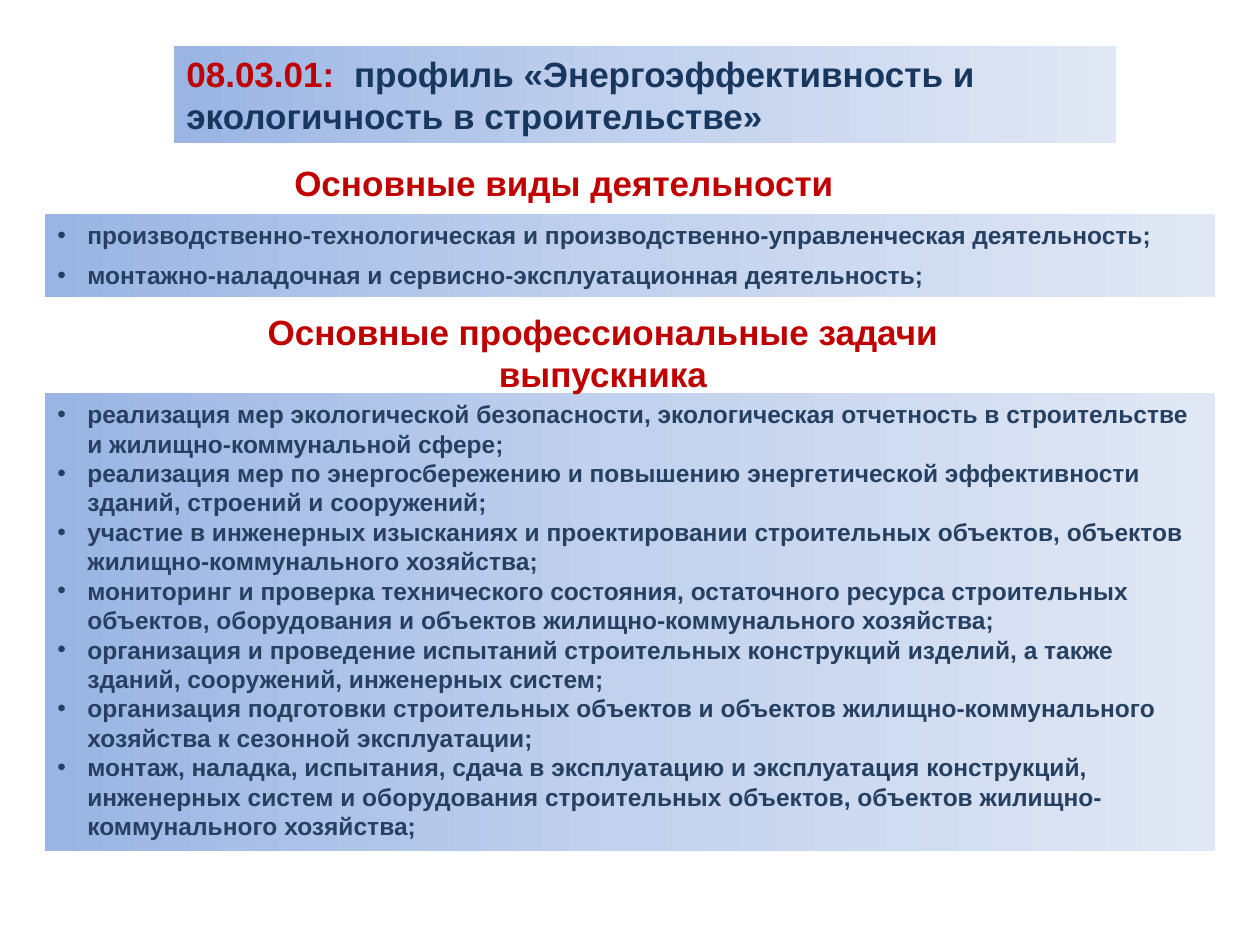
from copy import deepcopy

from lxml import etree
from pptx import Presentation
from pptx.dml.color import RGBColor
from pptx.enum.shapes import MSO_SHAPE
from pptx.enum.text import MSO_ANCHOR, MSO_AUTO_SIZE, PP_ALIGN
from pptx.oxml.ns import qn
from pptx.util import Emu, Pt

RECTANGLE = MSO_SHAPE.RECTANGLE
TOP = MSO_ANCHOR.TOP
FIT_SHAPE = MSO_AUTO_SIZE.SHAPE_TO_FIT_TEXT
LEFT, CENTER = PP_ALIGN.LEFT, PP_ALIGN.CENTER

EMU_PER_PX = 914400 / 126
SLIDE_SIZE = (1260, 945)
BULLET_INDENT = 30
PANEL_LEFT, PANEL_WIDTH = 45, 1170

COLORS = {
    "heading": "C00000",
    "title": "17375E",
    "list": "254061",
}
GRADIENT = {0: "9AB5E4", 0.5: "C2D1ED", 1: "E1E8F5"}
FRAME_FORMAT = {"word_wrap": True, "auto_size": FIT_SHAPE, "vertical_anchor": TOP}

ACTIVITIES = [
    "производственно-технологическая и производственно-управленческая деятельность;",
    "монтажно-наладочная и сервисно-эксплуатационная деятельность;",
]
TASKS = [
    "реализация мер экологической безопасности, экологическая отчетность в строительстве "
    "и жилищно-коммунальной сфере;",
    "реализация мер по энергосбережению и повышению энергетической эффективности "
    "зданий, строений и сооружений;",
    "участие в инженерных изысканиях и проектировании строительных объектов, объектов "
    "жилищно-коммунального хозяйства;",
    "мониторинг и проверка технического состояния, остаточного ресурса строительных "
    "объектов, оборудования и объектов жилищно-коммунального хозяйства;",
    "организация и проведение испытаний строительных конструкций изделий, а также "
    "зданий, сооружений, инженерных систем;",
    "организация подготовки строительных объектов и объектов жилищно-коммунального "
    "хозяйства к сезонной эксплуатации;",
    "монтаж, наладка, испытания, сдача в эксплуатацию и эксплуатация конструкций, "
    "инженерных систем и оборудования строительных объектов, объектов "
    "жилищно-коммунального хозяйства;",
]


def px(value):
    return Emu(round(value * EMU_PER_PX))


def apply_format(target, values):
    for name, value in values.items():
        setattr(target, name, value)


def fill_gradient(shape):
    """Fill with the three-stop gradient running from left to right."""
    shape.fill.gradient()
    shape.fill.gradient_angle = 0
    stop_list = shape.element.spPr.find(qn("a:gradFill")).find(qn("a:gsLst"))
    stop_list.append(deepcopy(stop_list[0]))
    for stop, (position, color) in zip(shape.fill.gradient_stops, GRADIENT.items()):
        stop.position = position
        stop.color.rgb = RGBColor.from_string(color)


def add_bullet(paragraph):
    properties = paragraph._p.get_or_add_pPr()
    properties.set("marL", str(px(BULLET_INDENT)))
    properties.set("indent", str(-px(BULLET_INDENT)))
    etree.SubElement(properties, qn("a:buFont")).set("typeface", "Arial")
    etree.SubElement(properties, qn("a:buChar")).set("char", "•")


def add_run(paragraph, text, size, color):
    run = paragraph.add_run()
    run.text = text
    apply_format(run.font, {"name": "Arial", "size": Pt(size), "bold": True})
    run.font.color.rgb = RGBColor.from_string(COLORS[color])


def add_panel(slide, *box):
    panel = slide.shapes.add_shape(RECTANGLE, *map(px, box))
    panel.shadow.inherit = False
    panel.line.fill.background()
    fill_gradient(panel)
    apply_format(panel.text_frame, FRAME_FORMAT)
    return panel.text_frame


def add_title(slide):
    paragraph = add_panel(slide, 174, 46, 942, 97).paragraphs[0]
    paragraph.alignment = LEFT
    add_run(paragraph, "08.03.01:  ", 20, "heading")
    add_run(paragraph, "профиль «Энергоэффективность и экологичность в строительстве»", 20, "title")


def add_heading(slide, text, *box):
    frame = slide.shapes.add_textbox(*map(px, box)).text_frame
    apply_format(frame, FRAME_FORMAT)
    paragraph = frame.paragraphs[0]
    paragraph.alignment = CENTER
    add_run(paragraph, text, 20, "heading")


def add_list(slide, items, top, height):
    frame = add_panel(slide, PANEL_LEFT, top, PANEL_WIDTH, height)
    for index, item in enumerate(items):
        paragraph = frame.add_paragraph() if index else frame.paragraphs[0]
        add_bullet(paragraph)
        paragraph.alignment = LEFT
        add_run(paragraph, item, 14, "list")


def main():
    presentation = Presentation()
    presentation.slide_width, presentation.slide_height = map(px, SLIDE_SIZE)
    slide = presentation.slides.add_slide(presentation.slide_layouts[6])

    add_list(slide, ACTIVITIES[:1], 214, 43)
    add_list(slide, TASKS, 393, 458)
    add_heading(slide, "Основные профессиональные задачи выпускника", 154, 304, 898, 97)
    add_heading(slide, "Основные виды деятельности", 213, 155, 702, 55)
    add_list(slide, ACTIVITIES[1:], 254, 43)
    add_title(slide)

    presentation.save("out.pptx")


if __name__ == "__main__":
    main()
